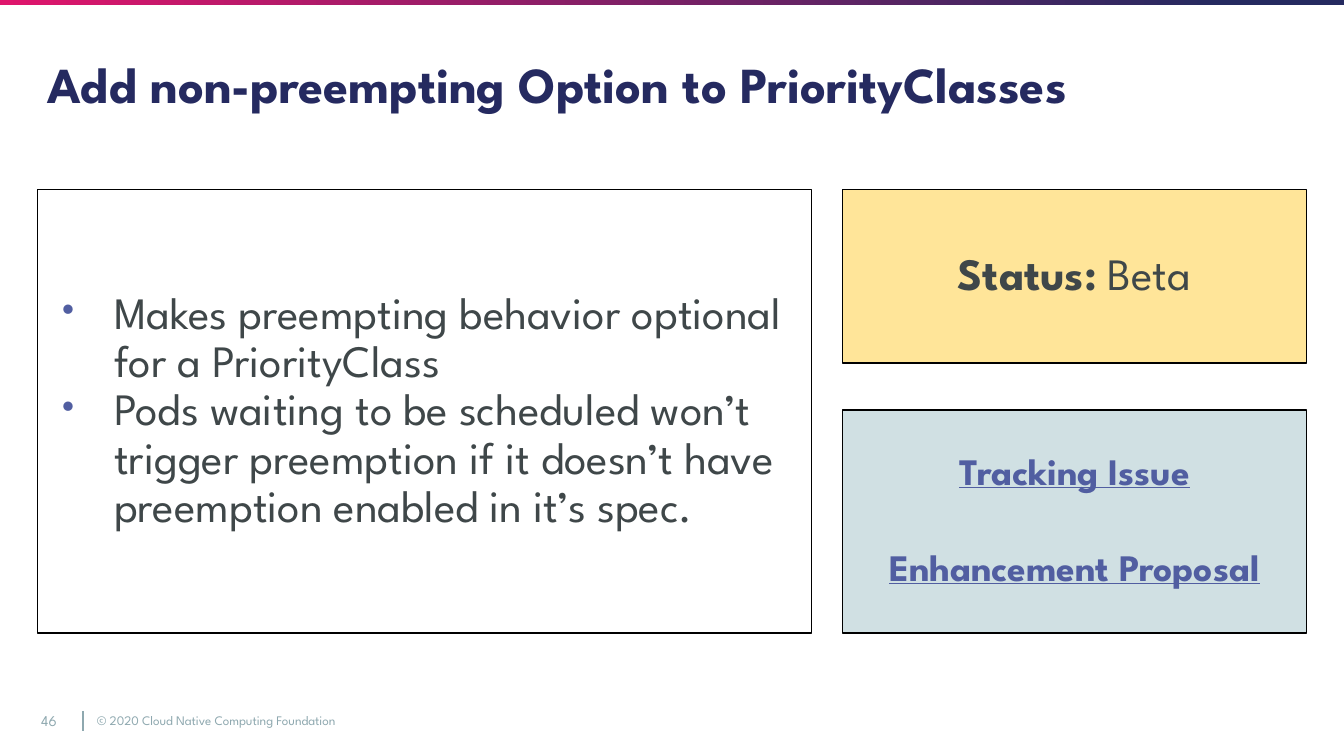
"""Build the slide about the non-preempting option for PriorityClasses."""
from lxml.etree import SubElement
from pptx import Presentation
from pptx.dml.color import RGBColor
from pptx.enum.shapes import MSO_CONNECTOR, MSO_SHAPE
from pptx.enum.text import MSO_ANCHOR, PP_ALIGN
from pptx.oxml.ns import qn
from pptx.util import Inches, Pt

FONT = "League Spartan"
NAVY, PINK, VIOLET, SLATE, GREY = "252A60", "DF156C", "515EA1", "3F4749", "8EA8AF"


def rgb(value):
    return RGBColor.from_string(value)


def write(shape, paragraphs, size, color, align=PP_ALIGN.LEFT, spacing=1.0, gap=0, inset=0.07):
    frame = shape.text_frame
    frame_format = {
        "word_wrap": True, "vertical_anchor": MSO_ANCHOR.MIDDLE,
        "margin_left": Inches(0.07), "margin_right": Inches(0.07),
        "margin_top": Inches(inset), "margin_bottom": Inches(inset),
    }
    for name, value in frame_format.items():
        setattr(frame, name, value)
    for index, runs in enumerate(paragraphs):
        paragraph = frame.add_paragraph() if index else frame.paragraphs[0]
        paragraph_format = {
            "alignment": align, "line_spacing": spacing,
            "space_before": Pt(gap if index else 0),
        }
        for name, value in paragraph_format.items():
            setattr(paragraph, name, value)
        for text, bold, underline in runs:
            run = paragraph.add_run()
            run.text = text
            run_format = {"name": FONT, "size": Pt(size), "bold": bold, "underline": underline}
            for name, value in run_format.items():
                setattr(run.font, name, value)
            run.font.color.rgb = rgb(color)


deck = Presentation()
deck.slide_width, deck.slide_height = Inches(10), Inches(10 * 9 / 16)
slide = deck.slides.add_slide(deck.slide_layouts[5])

top_band = slide.shapes.add_shape(MSO_SHAPE.RECTANGLE, 0, 0, Inches(10), Inches(0.04))
top_band.shadow.inherit = False
top_band.line.fill.background()
top_band.fill.gradient()
top_band.fill.gradient_angle = 0
for stop, position, color in zip(top_band.fill.gradient_stops, (0, 0.91), (PINK, NAVY)):
    stop.position = position
    stop.color.rgb = rgb(color)

footer = [
    (0.65, 3.38, "© 2020 Cloud Native Computing Foundation", 7, PP_ALIGN.LEFT),
    (0.15, 0.43, "46", 8, PP_ALIGN.CENTER),
]
for left, width, text, size, align in footer:
    footer_text = slide.shapes.add_textbox(Inches(left), Inches(5.21), Inches(width), Inches(0.3))
    write(footer_text, [[(text, False, False)]], size, GREY, align, inset=0.04)

footer_divider = slide.shapes.add_connector(
    MSO_CONNECTOR.STRAIGHT, Inches(0.62), Inches(5.29), Inches(0.62), Inches(5.44))
footer_divider.line.color.rgb = rgb(GREY)
footer_divider.line.width = Pt(1)
SubElement(footer_divider._element.spPr, qn("a:effectLst"))

title = slide.shapes.title
title_place = {"left": 0.28, "top": 0.35, "width": 9.44, "height": 0.48}
for name, value in title_place.items():
    setattr(title, name, Inches(value))
write(title, [[("Add non-preempting Option to PriorityClasses", True, False)]], 27, NAVY, spacing=1.15)

summary = [
    [("Makes preempting behavior optional for a PriorityClass", False, False)],
    [("Pods waiting to be scheduled won’t trigger preemption if it doesn’t have "
      "preemption enabled in it’s spec.", False, False)],
]
links = [[("Tracking Issue", True, True)], [("Enhancement Proposal", True, True)]]
status = [[("Status:", True, False), (" Beta", False, False)]]

panels = [
    ((0.28, 1.41, 5.76, 3.3), None, summary, 24, SLATE, PP_ALIGN.LEFT, 0),
    ((6.27, 3.05, 3.45, 1.66), "D0E0E3", links, 20, VIOLET, PP_ALIGN.CENTER, 30),
    ((6.27, 1.41, 3.45, 1.29), "FFE599", status, 24, SLATE, PP_ALIGN.CENTER, 0),
]
for place, fill, paragraphs, size, color, align, gap in panels:
    panel = slide.shapes.add_shape(MSO_SHAPE.RECTANGLE, *map(Inches, place))
    panel.shadow.inherit = False
    panel.line.color.rgb = rgb("000000")
    panel.line.width = Pt(0.75)
    if fill:
        panel.fill.solid()
        panel.fill.fore_color.rgb = rgb(fill)
    else:
        panel.fill.background()
    write(panel, paragraphs, size, color, align, 0.9, gap)
    if paragraphs is summary:
        for paragraph in panel.text_frame.paragraphs:
            properties = paragraph._p.get_or_add_pPr()
            properties.set("marL", str(Inches(0.5)))
            properties.set("indent", str(Inches(-0.42)))
            bullet_color = SubElement(properties, qn("a:buClr"))
            SubElement(bullet_color, qn("a:srgbClr"), val=VIOLET)
            SubElement(properties, qn("a:buFont"), typeface=FONT)
            SubElement(properties, qn("a:buChar"), char="•")

deck.save("out.pptx")
